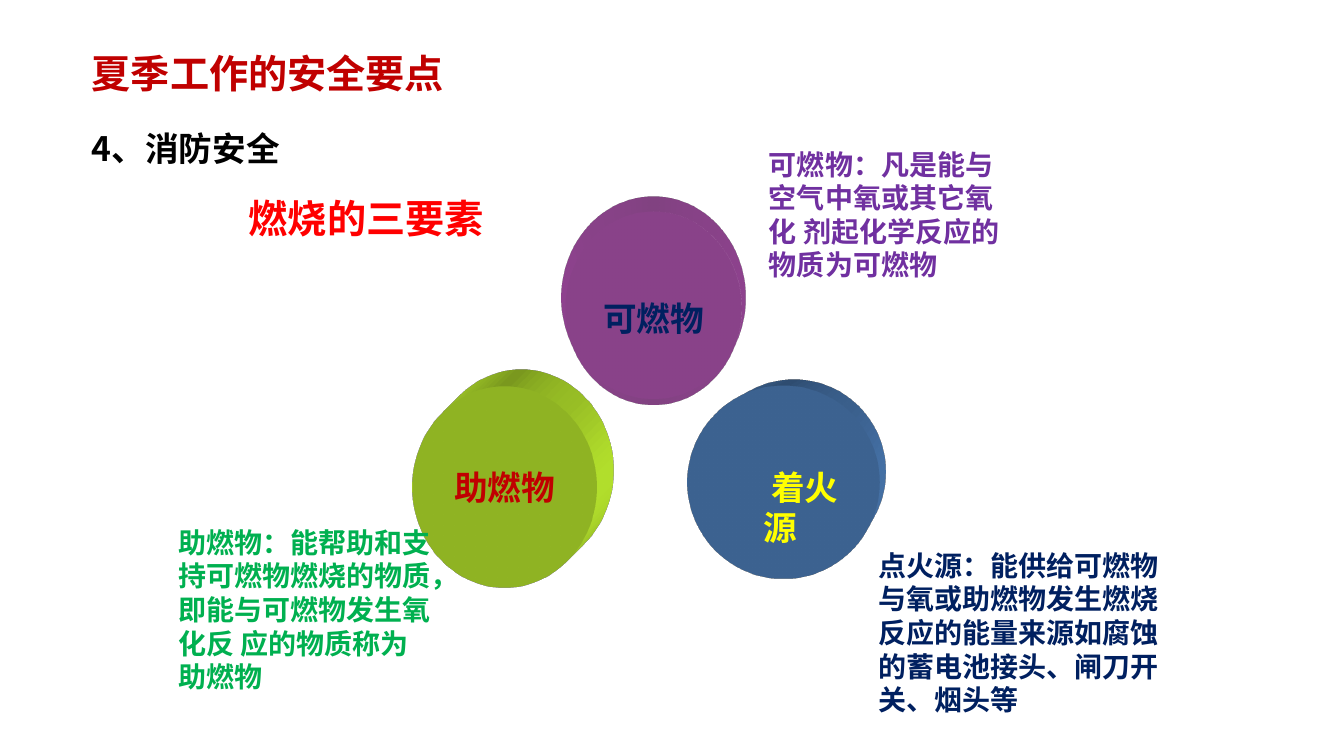
from lxml import etree
from pptx import Presentation
from pptx import util as u
from pptx.dml import color
from pptx.enum import shapes, text
from pptx.oxml import ns

FACE = "Noto Sans CJK SC"
HUE = {
    "title": "C00000", "head": "FF0000", "black": "000000",
    "violet": "7030A0", "navy": "002060", "green": "00B050",
    "yellow": "FFFF00", "plum": "800080", "lime": "CCFF33", "blue": "4F81BD",
}


def rgb(key):
    """Return the named colour."""
    return color.RGBColor.from_string(HUE[key])


def apply(obj, vals):
    """Set attributes from a dict of format values."""
    for key, val in vals.items():
        setattr(obj, key, val)


def add(parent, tag, **vals):
    """Append a drawing element with its attributes."""
    node = etree.SubElement(parent, ns.qn("a:" + tag))
    for key, val in vals.items():
        node.set(key, val)
    return node


def place(shape, box):
    """Move a shape to a box given in centimetres."""
    apply(shape, dict(zip(("left", "top", "width", "height"), map(u.Cm, box))))


def write(shape, words, size, hue, frame=None, align=text.PP_ALIGN.LEFT):
    """Write one bold paragraph into a shape."""
    tf = shape.text_frame
    apply(tf, {"word_wrap": True, "auto_size": text.MSO_AUTO_SIZE.NONE,
               "vertical_anchor": text.MSO_ANCHOR.TOP, **(frame or {})})
    par = tf.paragraphs[0]
    apply(par, {"alignment": align, "line_spacing": u.Pt(size * 1.2),
                "space_before": u.Pt(0)})
    run = par.add_run()
    run.text = words
    apply(run.font, {"size": u.Pt(size), "bold": True, "name": FACE})
    run.font.color.rgb = rgb(hue)
    add(run.font._element, "ea", typeface=FACE)
    return par


def titles(slide, box):
    """Fill the title and the section line from the top of the box."""
    left, top, wide, _ = box
    head, body = slide.placeholders
    place(head, (left, top, wide, 1.45))
    write(head, "夏季工作的安全要点", 28, "title")
    place(body, (left, top + 1.98, wide, 1.27))
    par = write(body, "4、消防安全", 24, "black")
    prop = par._p.get_or_add_pPr()
    prop.set("marL", "0")
    prop.set("indent", "0")
    add(prop, "buNone")


def note(slide, box, words, size, hue):
    """Add a text box."""
    shape = slide.shapes.add_textbox(*map(u.Cm, box))
    write(shape, words, size, hue)


def extrude(shape, view, hue):
    """Give a shape depth, seen from the named camera."""
    prop = shape._element.spPr
    scene = add(prop, "scene3d")
    add(scene, "camera", prst=view)
    add(scene, "lightRig", rig="legacyFlat3", dir="b")
    solid = add(prop, "sp3d", extrusionH="430200", prstMaterial="legacyMatte")
    for side in ("bevelT", "bevelB"):
        add(solid, side, w="13500", h="13500", prst="angle")
    add(add(solid, "extrusionClr"), "srgbClr", val=HUE[hue])


def disc(slide, box, view, hue, words, ink, frame, align=text.PP_ALIGN.CENTER):
    """Draw a thick labelled disc."""
    shape = slide.shapes.add_shape(shapes.MSO_SHAPE.OVAL, *map(u.Cm, box))
    shape.fill.solid()
    shape.fill.fore_color.rgb = rgb(hue)
    shape.line.fill.background()
    shape.shadow.inherit = False
    extrude(shape, view, hue)
    write(shape, words, 24, ink, frame, align)
    return shape


def discs(slide, box):
    """Draw the three elements of fire inside the box."""
    x, y = box[:2]
    mid = {"vertical_anchor": text.MSO_ANCHOR.MIDDLE, "word_wrap": False}
    low = {"margin_left": u.Cm(1.22), "margin_right": u.Cm(0.1),
           "margin_top": u.Cm(1.33)}
    fuel = disc(slide, (x + 3.76, y, 4.65, 5.08), "legacyPerspectiveBottom",
                "plum", "可燃物", "navy", {**mid, "margin_top": u.Cm(1.2)})
    tint = fuel._element.spPr.find(ns.qn("a:solidFill"))[0]
    add(tint, "alpha", val="50000")
    disc(slide, (x, y + 4.78, 4.65, 5.08), "legacyObliqueTopRight",
         "lime", "助燃物", "title", mid)
    disc(slide, (x + 6.93, y + 4.78, 4.83, 4.85), "legacyPerspectiveTopRight",
         "blue", " 着火源", "yellow", low, text.PP_ALIGN.LEFT)


def main():
    """Build and save the slide."""
    deck = Presentation()
    deck.slide_width, deck.slide_height = u.Cm(33.87), u.Cm(19.05)
    slide = deck.slides.add_slide(deck.slide_layouts[1])
    titles(slide, (2.06, 1.12, 9.7, 3.25))
    discs(slide, (10.39, 4.95, 11.76, 9.86))
    note(slide, (6.02, 4.78, 10.31, 1.45), "燃烧的三要素", 28, "head")
    note(slide, (19.13, 3.58, 6.35, 3.68),
         "可燃物：凡是能与空气中氧或其它氧化 剂起化学反应的物质为可燃物", 20, "violet")
    note(slide, (21.89, 13.69, 7.75, 4.52),
         "点火源：能供给可燃物与氧或助燃物发生燃烧反应的能量来源"
         "如腐蚀的蓄电池接头、闸刀开关、烟头等", 20, "navy")
    note(slide, (4.24, 13.11, 6.93, 4.52),
         "助燃物：能帮助和支持可燃物燃烧的物质，即能与可燃物发生氧化反 "
         "应的物质称为助燃物", 20, "green")
    deck.save("out.pptx")


if __name__ == "__main__":
    main()
